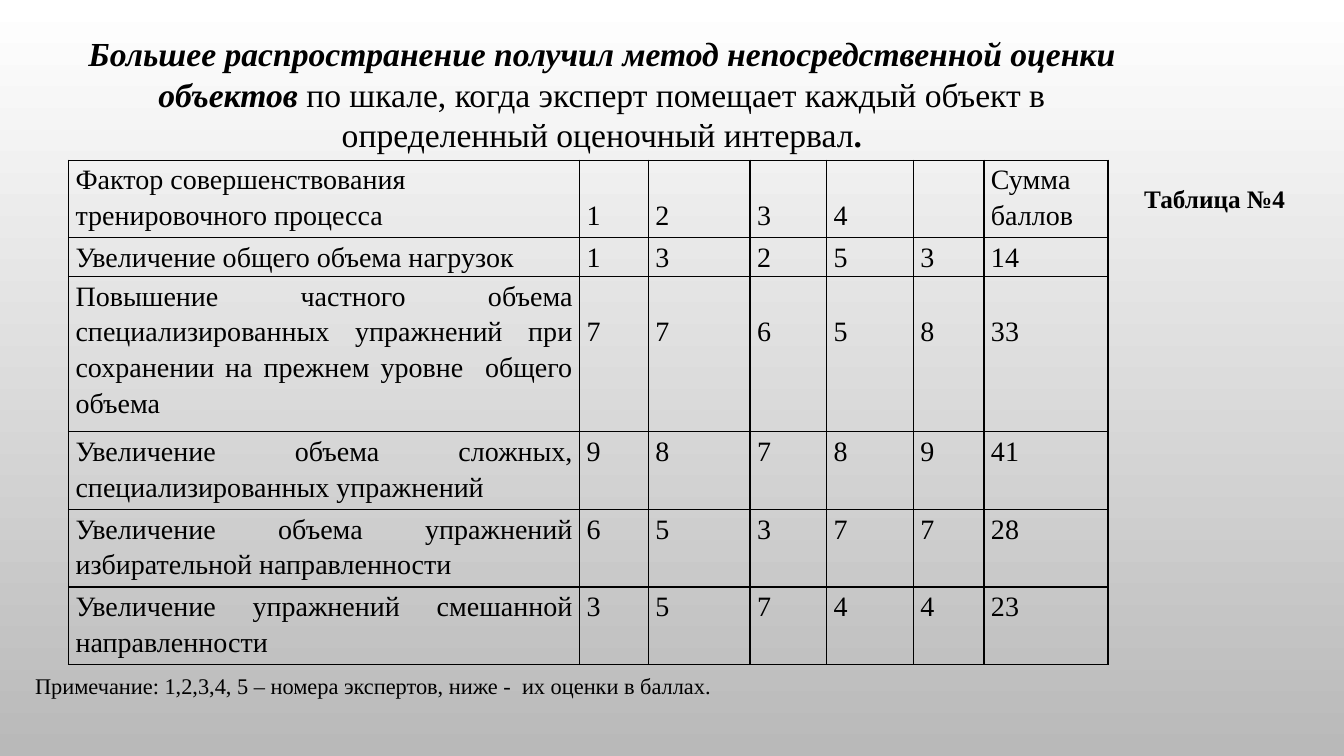
from lxml import etree
from pptx import Presentation
from pptx.dml.color import RGBColor
from pptx.enum.text import MSO_AUTO_SIZE, PP_ALIGN
from pptx.oxml.ns import qn
from pptx.util import Inches, Pt

CENTER = PP_ALIGN.CENTER
JUSTIFY = PP_ALIGN.JUSTIFY
LEFT = PP_ALIGN.LEFT
GROW = MSO_AUTO_SIZE.SHAPE_TO_FIT_TEXT

FONT = "Times New Roman"
BLACK = "000000"
LINE_SPACING = 1.15
COLUMN_WIDTHS = [5.07, 0.68, 1.01, 0.76, 0.86, 0.7, 1.23]
ROW_HEIGHTS = [0.77, 0.38, 1.54, 0.77, 0.77, 0.77]
LOWERED_ROWS = (0, 2)
SCORES = [
    ["Фактор совершенствования\nтренировочного процесса", "1", "2", "3", "4", "", "Сумма баллов"],
    ["Увеличение общего объема нагрузок", "1", "3", "2", "5", "3", "14"],
    ["Повышение частного объема специализированных упражнений при "
     "сохранении на прежнем уровне  общего объема", "7", "7", "6", "5", "8", "33"],
    ["Увеличение объема сложных, специализированных упражнений", "9", "8", "7", "8", "9", "41"],
    ["Увеличение объема упражнений избирательной направленности", "6", "5", "3", "7", "7", "28"],
    ["Увеличение упражнений смешанной направленности", "3", "5", "7", "4", "4", "23"],
]


def color(value):
    return RGBColor.from_string(value)


def set_font(font, size, bold=None):
    font.name = FONT
    font.size = Pt(size)
    font.bold = bold
    font.color.rgb = color(BLACK)


def set_background(page):
    fill = page.background.fill
    fill.gradient()
    fill.gradient_angle = 270
    for stop, shade in zip(fill.gradient_stops, ("FFFFFF", "B9B9B9")):
        stop.color.rgb = color(shade)


def add_text(page, place, spans, size, align=LEFT, wrap=False, bold=None):
    box = page.shapes.add_textbox(*map(Inches, place))
    frame = box.text_frame
    frame.word_wrap = wrap
    frame.auto_size = GROW
    para = frame.paragraphs[0]
    para.alignment = align
    set_font(para.font, size, bold)
    for text, emphasis in spans:
        span = para.add_run()
        span.text = text
        for name, value in emphasis.items():
            setattr(span.font, name, value)
    return para


def add_borders(cell):
    properties = cell._tc.get_or_add_tcPr()
    for side in ("a:lnL", "a:lnR", "a:lnT", "a:lnB"):
        line = etree.SubElement(properties, qn(side), w=str(Pt(1)))
        fill = etree.SubElement(line, qn("a:solidFill"))
        etree.SubElement(fill, qn("a:srgbClr"), val=BLACK)


def fill_cell(cell, text, top):
    add_borders(cell)
    cell.fill.background()
    cell.margin_left = cell.margin_right = Inches(0.07)
    cell.margin_top = Inches(top)
    cell.margin_bottom = 0
    cell.text = text
    for para in cell.text_frame.paragraphs:
        para.alignment = JUSTIFY
        para.line_spacing = LINE_SPACING
        set_font(para.font, 20)


def add_score_table(page):
    frame = page.shapes.add_table(
        len(ROW_HEIGHTS), len(COLUMN_WIDTHS), Inches(0.68), Inches(1.59),
        Inches(sum(COLUMN_WIDTHS)), Inches(sum(ROW_HEIGHTS)))
    table = frame.table
    table.first_row = False
    table.horz_banding = False
    for column, width in zip(table.columns, COLUMN_WIDTHS):
        column.width = Inches(width)
    for row, height in zip(table.rows, ROW_HEIGHTS):
        row.height = Inches(height)
    for row_index, values in enumerate(SCORES):
        for column_index, text in enumerate(values):
            lowered = row_index in LOWERED_ROWS and len(text) in (1, 2)
            fill_cell(table.cell(row_index, column_index), text, 0.35 if lowered else 0)


def main():
    deck = Presentation()
    deck.slide_width = Inches(13.33)
    deck.slide_height = Inches(7.5)
    page = deck.slides.add_slide(deck.slide_layouts[6])
    set_background(page)
    title = [
        ("Большее распространение получил метод непосредственной оценки объектов",
         {"bold": True, "italic": True}),
        (" по шкале, когда эксперт помещает каждый объект в определенный оценочный интервал", {}),
        (".", {"bold": True}),
    ]
    add_text(page, (0.68, 0.28, 10.58, 1.31), title, 24, CENTER, wrap=True)
    add_text(page, (11.25, 1.77, 1.61, 0.4), [("Таблица №4", {})], 18, bold=True)
    add_score_table(page)
    note = "Примечание: 1,2,3,4, 5 – номера экспертов, ниже -  их оценки в баллах."
    para = add_text(page, (0.25, 6.58, 7, 0.39), [(note, {})], 16, JUSTIFY)
    para.line_spacing = LINE_SPACING
    para.space_after = Pt(10)
    deck.save("out.pptx")


if __name__ == "__main__":
    main()
